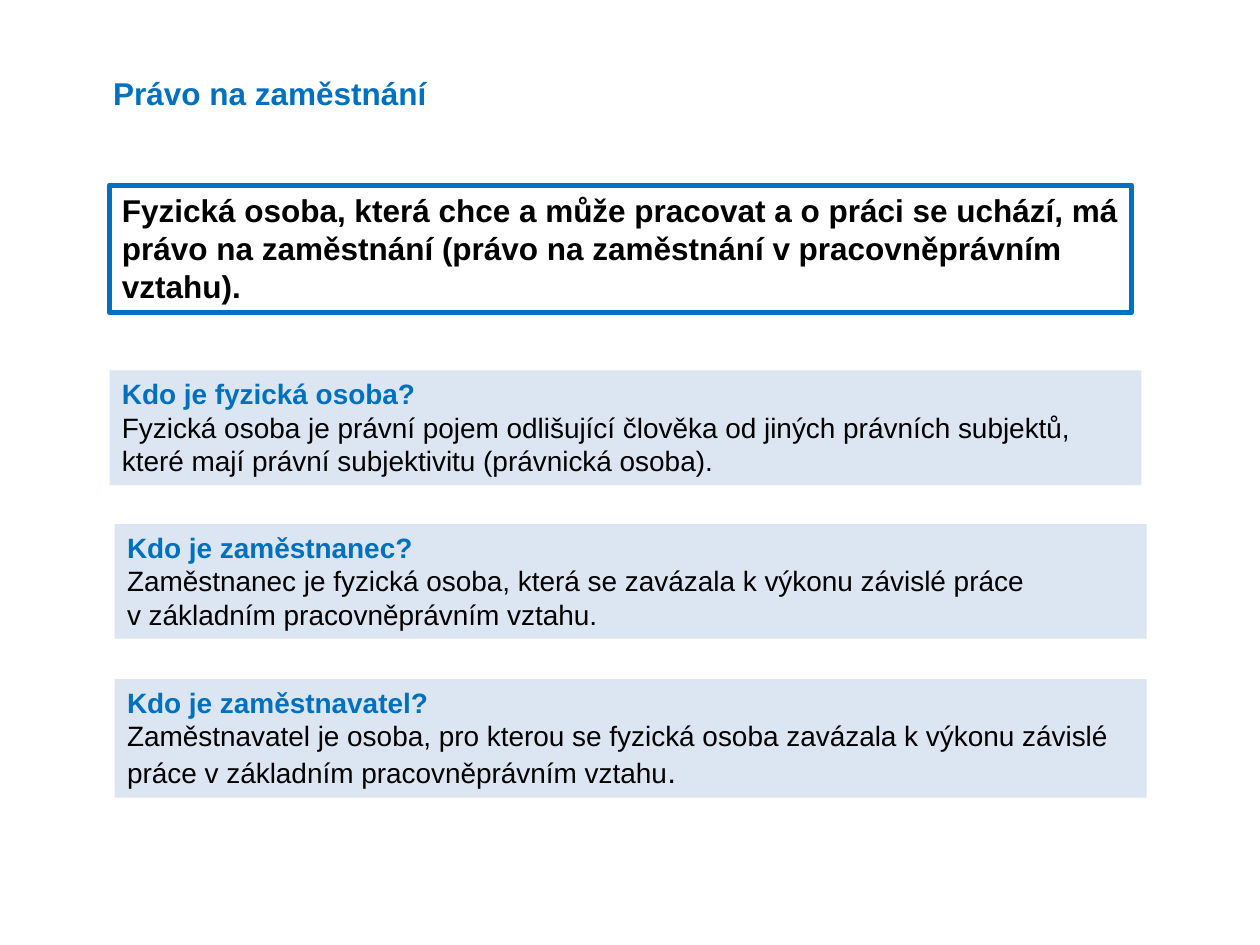
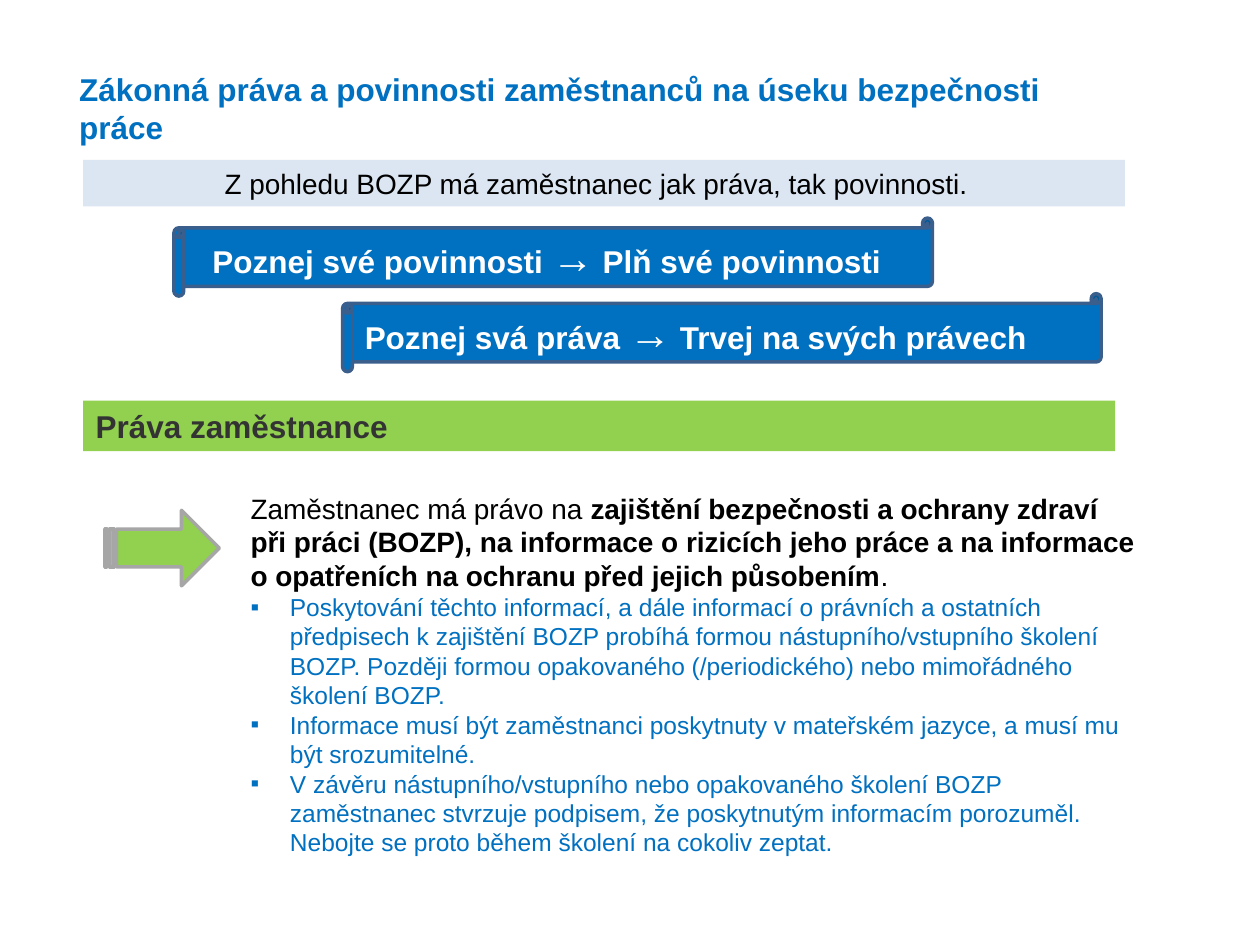
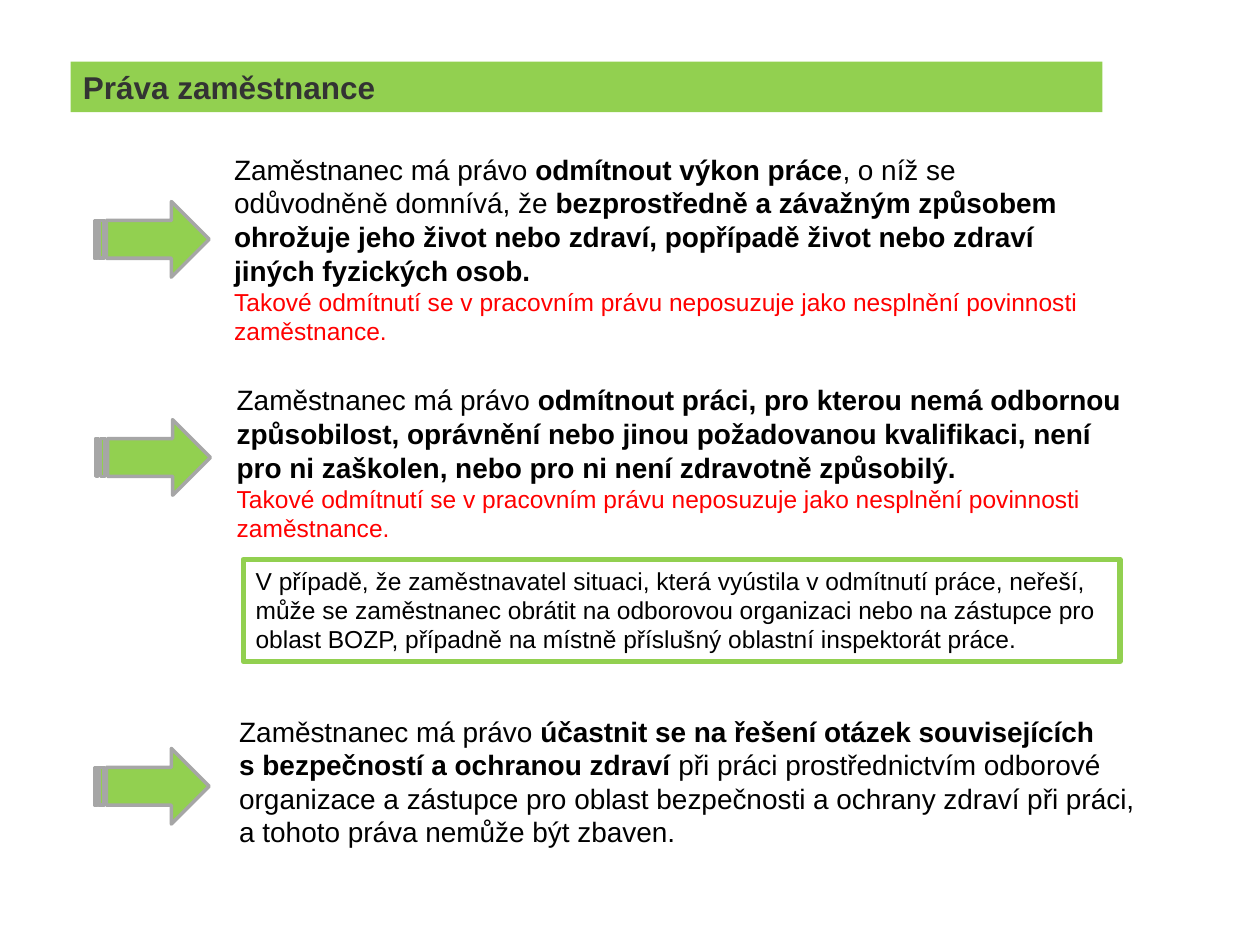
"""Builds three slides on the right to work and the safety rights of employees."""
from lxml import etree
from pptx import Presentation
from pptx import util as u
from pptx.dml import color
from pptx.enum import shapes, text
from pptx.oxml import ns

FONT = "Arial"
INK = {"blue": "0070C0", "pale": "DCE6F2", "green": "92D050", "grey": "A6A6A6", "navy": "3A5F8C",
       "dark": "333333", "black": "000000", "white": "FFFFFF", "red": "FF0000"}

STYLES = {
    "title": (18, True, "blue"),
    "lead": (18, True, "black"),
    "head": (16, True, "blue"),
    "plain": (16, False, "black"),
    "bold": (16, True, "black"),
    "stop": (18, False, "black"),
    "banner": (18, True, "dark"),
    "scroll": (18, True, "white"),
    "sign": (24, True, "white"),
    "bullet": (14, False, "blue"),
    "warn": (14, False, "red"),
    "note": (14, False, "black"),
}

RECT = shapes.MSO_SHAPE.RECTANGLE
KINDS = {
    "text": (None, None, None, 0),
    "frame": (RECT, None, "blue", 3),
    "case": (RECT, None, "green", 3),
    "pale": (RECT, "pale", None, 0),
    "white": (RECT, "white", None, 0),
    "banner": (RECT, "green", None, 0),
    "scroll": (shapes.MSO_SHAPE.HORIZONTAL_SCROLL, "blue", "navy", 2),
    "arrow": (shapes.MSO_SHAPE.STRIPED_RIGHT_ARROW, "green", "grey", 2),
}

WIDE = 589.7
RIGHT = ("Zaměstnanec má právo ", "plain")
WARN = [("Takové odmítnutí se v pracovním právu neposuzuje jako nesplnění povinnosti zaměstnance.", "warn")]
BANNER = [[("Práva zaměstnance", "banner")]]


def arrow(left, top):
    return "arrow", (left, top, 65.5, 43.2), []


def banner(left, top):
    return "banner", (left, top, WIDE, 28.8), BANNER


def scroll(left, top, first, last, **opts):
    runs = [(first, "scroll"), ("→", "sign"), (last, "scroll")]
    return "scroll", (left, top, 433.4, 44.6), [runs], opts


SLIDES = [
    [
        ("text", (57.6, 38.9, WIDE, 28.8), [[("Právo na zaměstnání", "title")]]),
        ("frame", (62.6, 105.8, 583.9, 72.7), [
            [("Fyzická osoba, která chce a může pracovat a o práci se uchází, má právo na zaměstnání "
              "(právo na zaměstnání v pracovněprávním vztahu).", "lead")]]),
        ("pale", (62.6, 211.7, WIDE, 65.5), [
            [("Kdo je fyzická osoba?", "head")],
            [("Fyzická osoba je právní pojem odlišující člověka od jiných právních subjektů, "
              "které mají právní subjektivitu (právnická osoba).", "plain")]]),
        ("pale", (65.5, 299.5, WIDE, 65.5), [
            [("Kdo je zaměstnanec?", "head")],
            [("Zaměstnanec je fyzická osoba, která se zavázala k výkonu závislé práce \n"
              "v základním pracovněprávním vztahu.", "plain")]]),
        ("pale", (65.5, 388.1, WIDE, 67.7), [
            [("Kdo je zaměstnavatel?", "head")],
            [("Zaměstnavatel je osoba, pro kterou se fyzická osoba zavázala k výkonu závislé práce "
              "v základním pracovněprávním vztahu", "plain"), (".", "stop")]]),
    ],
    [
        ("text", (136.1, 277.2, 522.7, 218.2), [
            [("Zaměstnanec má právo na ", "plain"),
             ("zajištění bezpečnosti a ochrany zdraví při práci (BOZP), na informace o rizicích jeho práce "
              "a na informace o opatřeních na ochranu před jejich působením", "bold"), (".", "plain")],
            [("Poskytování těchto informací, a dále informací o právních a ostatních předpisech k zajištění "
              "BOZP probíhá formou nástupního/vstupního školení BOZP. Později formou opakovaného "
              "(/periodického) nebo mimořádného školení BOZP.", "bullet")],
            [("Informace musí být zaměstnanci poskytnuty v mateřském jazyce, a musí mu být srozumitelné.",
              "bullet")],
            [("V závěru nástupního/vstupního nebo opakovaného školení BOZP zaměstnanec stvrzuje podpisem, "
              "že poskytnutým informacím porozuměl. Nebojte se proto během školení na cokoliv zeptat.",
              "bullet")]]),
        ("text", (38.2, 36.7, 602.6, 51.1), [
            [("Zákonná práva a povinnosti zaměstnanců na úseku bezpečnosti práce", "title")]]),
        arrow(59.8, 291.6),
        ("pale", (47.5, 91.4, 595.4, 26.6), [
            [("Z pohledu BOZP má zaměstnanec jak práva, tak povinnosti.", "plain")]],
         {"mid": True, "inset": 16.2}),
        banner(47.5, 229),
        scroll(99.4, 124.6, "Poznej své povinnosti ", " Plň své povinnosti", mid=True, inset=17.2),
        scroll(195.8, 167.8, "Poznej svá práva ", " Trvej na svých právech"),
    ],
    [
        ("text", (128.2, 215.3, 522.7, 99.4), [
            [RIGHT, ("odmítnout práci, pro kterou nemá odbornou způsobilost, oprávnění nebo jinou požadovanou "
                     "kvalifikaci, není pro ni zaškolen, nebo pro ni není zdravotně způsobilý.", "bold")],
            WARN]),
        banner(40.3, 35.3),
        ("text", (126.7, 83.5, 501.1, 118.8), [
            [RIGHT, ("odmítnout výkon práce", "bold"), (", o níž se odůvodněně domnívá, že ", "plain"),
             ("bezprostředně a závažným způsobem ohrožuje jeho život nebo zdraví, popřípadě život nebo zdraví "
              "jiných fyzických osob.", "bold")],
            WARN]),
        ("case", (139, 319.7, 501.1, 58.3), [
            [("V případě, že zaměstnavatel situaci, která vyústila v odmítnutí práce, neřeší, může se "
              "zaměstnanec obrátit na odborovou organizaci nebo na zástupce pro oblast BOZP, případně "
              "na místně příslušný oblastní inspektorát práce.", "note")]]),
        arrow(54.7, 239.8),
        arrow(54, 115.2),
        ("white", (129.6, 404.6, 529.2, 85), [
            [RIGHT, ("účastnit se na řešení otázek souvisejících \ns bezpečností a ochranou zdraví ", "bold"),
             ("při práci prostřednictvím odborové organizace a zástupce pro oblast bezpečnosti a ochrany zdraví "
              "při práci, a tohoto práva nemůže být zbaven.", "plain")]]),
        arrow(54, 427.7),
    ],
]


def tint(name):
    return color.RGBColor.from_string(INK[name])


def paint(shape, fill, line, width):
    shape.shadow.inherit = False
    if fill:
        shape.fill.solid()
        shape.fill.fore_color.rgb = tint(fill)
    else:
        shape.fill.background()
    if line:
        shape.line.color.rgb = tint(line)
        shape.line.width = u.Pt(width)
    else:
        shape.line.fill.background()


def bullet(para):
    props = para._p.get_or_add_pPr()
    props.set("marL", str(u.Pt(22.5)))
    props.set("indent", str(-u.Pt(22.5)))
    etree.SubElement(props, ns.qn("a:buFont")).set("typeface", FONT)
    etree.SubElement(props, ns.qn("a:buChar")).set("char", "▪")


def add_run(para, words, style):
    size, bold, ink = STYLES[style]
    for row, line in enumerate(words.split("\n")):
        if row:
            para.add_line_break()
        run = para.add_run()
        run.text = line
        run.font.name, run.font.size, run.font.bold = FONT, u.Pt(size), bold
        run.font.color.rgb = tint(ink)


def write(frame, paras, anchor, mid=False, inset=7.2):
    frame.word_wrap = True
    frame.vertical_anchor = anchor
    frame.margin_right = u.Pt(inset)
    for row, runs in enumerate(paras):
        para = frame.add_paragraph() if row else frame.paragraphs[0]
        para.alignment = text.PP_ALIGN.CENTER if mid else text.PP_ALIGN.LEFT
        if runs[0][1] == "bullet":
            bullet(para)
        for words, style in runs:
            add_run(para, words, style)


def place(slide, kind, box, paras, opts=None):
    form, fill, line, width = KINDS[kind]
    area = [u.Pt(n) for n in box]
    if form is None:
        shape = slide.shapes.add_textbox(*area)
    else:
        shape = slide.shapes.add_shape(form, *area)
        paint(shape, fill, line, width)
    anchor = text.MSO_ANCHOR.MIDDLE if kind == "scroll" else text.MSO_ANCHOR.TOP
    if paras:
        write(shape.text_frame, paras, anchor, **(opts or {}))


def main():
    deck = Presentation()
    deck.slide_width, deck.slide_height = u.Pt(720), u.Pt(540)
    for items in SLIDES:
        slide = deck.slides.add_slide(deck.slide_layouts[6])
        for item in items:
            place(slide, *item)
    deck.save("out.pptx")


if __name__ == "__main__":
    main()
